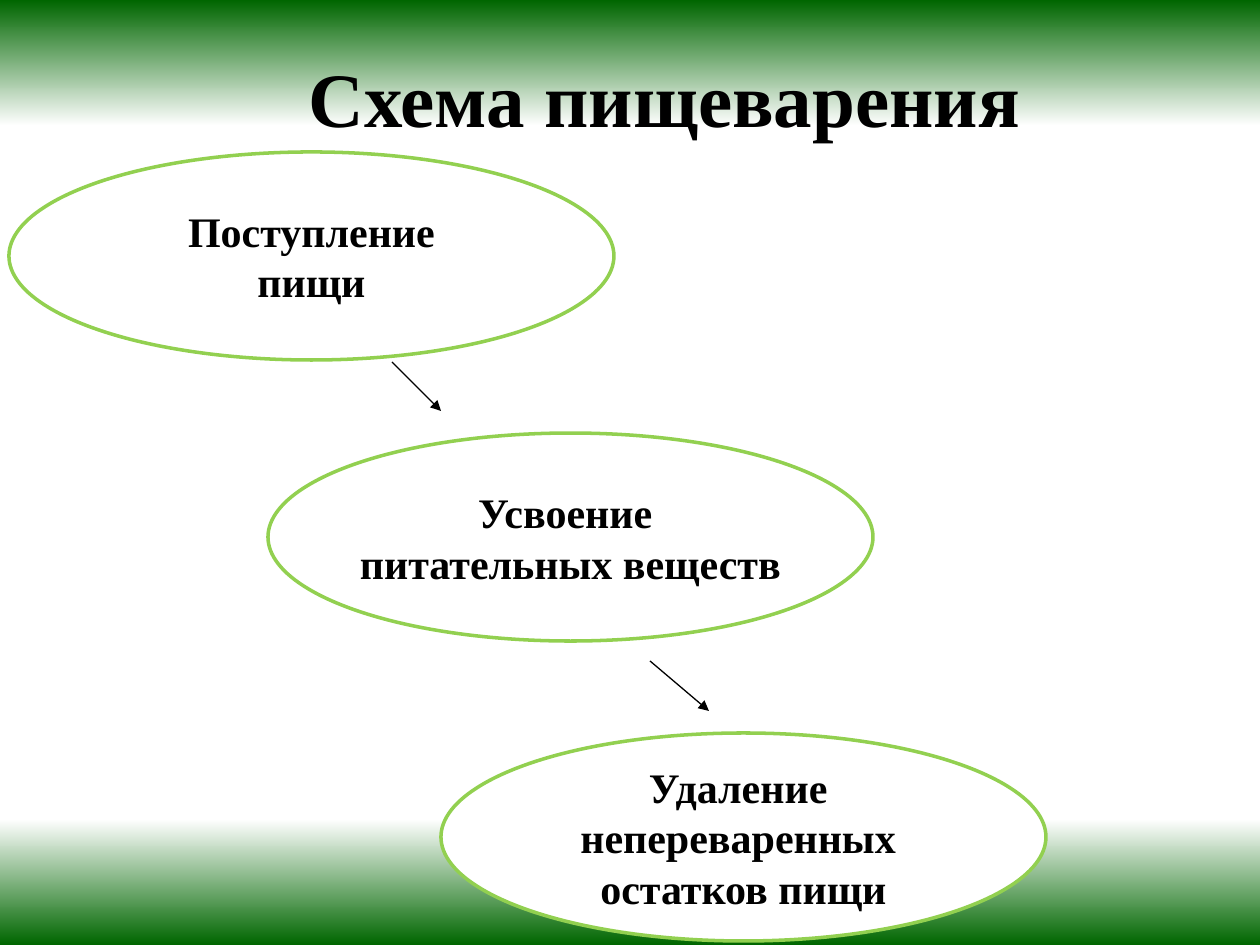
"""Build a slide with a three-stage scheme of digestion."""
from dataclasses import dataclass

import lxml.etree
import pptx
import pptx.dml.color
import pptx.enum.shapes
import pptx.enum.text
import pptx.oxml.ns
import pptx.util

PX_PER_INCH = 126
FONT = "Times New Roman"
BLACK = pptx.dml.color.RGBColor(0x00, 0x00, 0x00)
WHITE = pptx.dml.color.RGBColor(0xFF, 0xFF, 0xFF)
DARK_GREEN = pptx.dml.color.RGBColor(0x00, 0x66, 0x00)
LIGHT_GREEN = pptx.dml.color.RGBColor(0x92, 0xD0, 0x50)

SLIDE_W, SLIDE_H = 1260, 945
BAND_H = 126
STAGE_W, STAGE_H = 605, 208


@dataclass
class Band:
    top: int
    upper: pptx.dml.color.RGBColor
    lower: pptx.dml.color.RGBColor


@dataclass
class Stage:
    left: int
    top: int
    text: str


@dataclass
class Arrow:
    x1: int
    y1: int
    x2: int
    y2: int


BANDS = [
    Band(0, DARK_GREEN, WHITE),
    Band(SLIDE_H - BAND_H, WHITE, DARK_GREEN),
]
STAGES = [
    Stage(9, 152, "Поступление\nпищи"),
    Stage(268, 433, "Усвоение \nпитательных веществ"),
    Stage(441, 733, "Удаление \nнепереваренных \nостатков пищи"),
]
ARROWS = [Arrow(392, 362, 441, 411), Arrow(650, 661, 709, 711)]


def px(n: int) -> pptx.util.Emu:
    return pptx.util.Emu(round(n * 914400 / PX_PER_INCH))


def write(sp, text: str, size: int, wrap: bool) -> None:
    tf = sp.text_frame
    tf.text = text
    tf.word_wrap = wrap
    tf.vertical_anchor = pptx.enum.text.MSO_ANCHOR.MIDDLE
    for p in tf.paragraphs:
        p.alignment = pptx.enum.text.PP_ALIGN.CENTER
        for r in p.runs:
            r.font.name = FONT
            r.font.size = pptx.util.Pt(size)
            r.font.bold = True
            r.font.color.rgb = BLACK


def add_band(s, band: Band) -> None:
    sp = s.shapes.add_shape(pptx.enum.shapes.MSO_SHAPE.RECTANGLE,
                            px(0), px(band.top), px(SLIDE_W), px(BAND_H))
    sp.shadow.inherit = False
    sp.line.fill.background()
    sp.fill.gradient()
    sp.fill.gradient_angle = 270
    for stop, color in zip(sp.fill.gradient_stops, (band.upper, band.lower)):
        stop.color.rgb = color


def add_title(s, text: str) -> None:
    sp = s.shapes.add_textbox(px(233), px(38), px(863), px(117))
    write(sp, text, 44, True)


def add_stage(s, stage: Stage) -> None:
    sp = s.shapes.add_shape(pptx.enum.shapes.MSO_SHAPE.OVAL,
                            px(stage.left), px(stage.top), px(STAGE_W), px(STAGE_H))
    sp.shadow.inherit = False
    sp.fill.solid()
    sp.fill.fore_color.rgb = WHITE
    sp.line.color.rgb = LIGHT_GREEN
    sp.line.width = pptx.util.Pt(2)
    write(sp, stage.text, 24, False)


def add_arrow(s, arrow: Arrow) -> None:
    sp = s.shapes.add_connector(pptx.enum.shapes.MSO_CONNECTOR.STRAIGHT,
                                px(arrow.x1), px(arrow.y1), px(arrow.x2), px(arrow.y2))
    sp.line.color.rgb = BLACK
    sp.line.width = pptx.util.Pt(0.75)
    qn = pptx.oxml.ns.qn
    lxml.etree.SubElement(sp.line._get_or_add_ln(), qn("a:tailEnd"), type="triangle")
    lxml.etree.SubElement(sp._element.spPr, qn("a:effectLst"))


def main() -> None:
    prs = pptx.Presentation()
    prs.slide_width, prs.slide_height = px(SLIDE_W), px(SLIDE_H)
    s = prs.slides.add_slide(prs.slide_layouts[6])
    for band in BANDS:
        add_band(s, band)
    add_title(s, "Схема пищеварения")
    for stage in STAGES:
        add_stage(s, stage)
    for arrow in ARROWS:
        add_arrow(s, arrow)
    prs.save("out.pptx")


if __name__ == "__main__":
    main()
